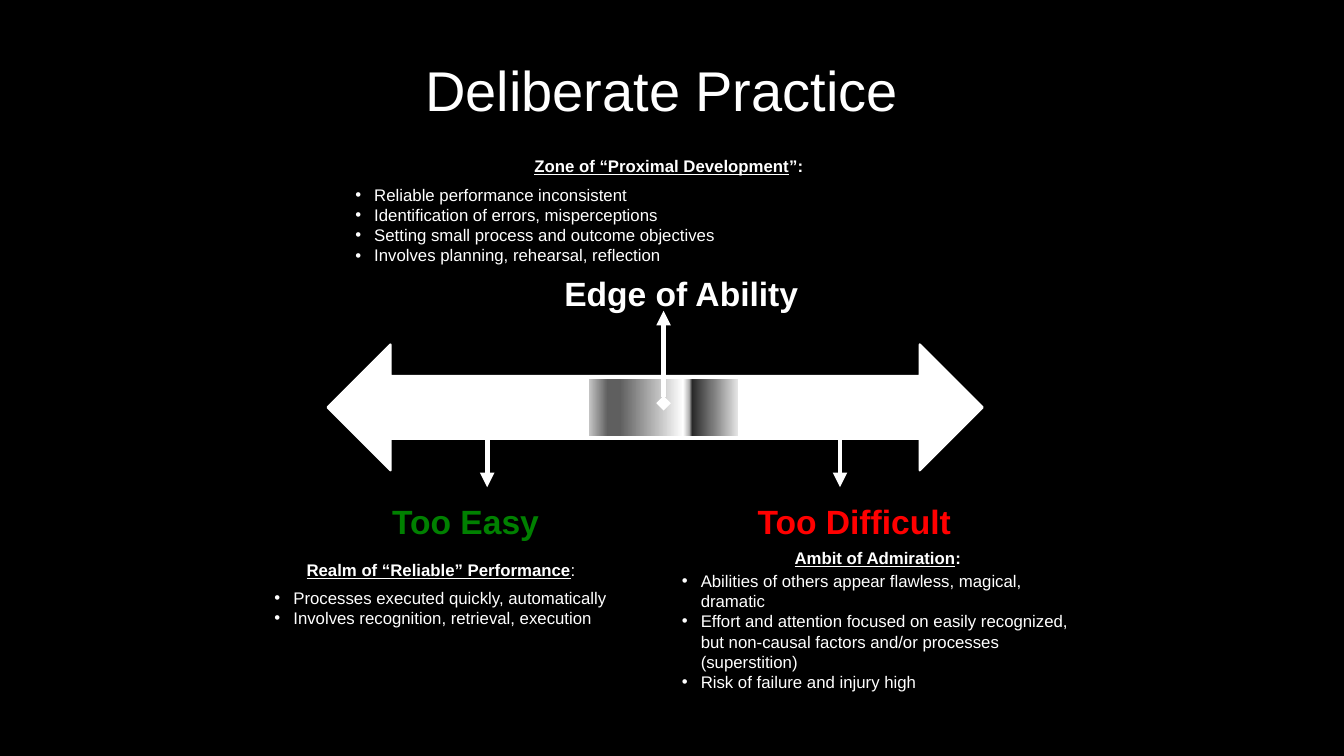
"""Build the Deliberate Practice slide: an ability continuum with three zones."""
from dataclasses import dataclass

from lxml.etree import SubElement
from pptx import Presentation
from pptx.dml.color import RGBColor
from pptx.enum.shapes import MSO_CONNECTOR, MSO_SHAPE
from pptx.enum.text import MSO_AUTO_SIZE, PP_ALIGN
from pptx.oxml.ns import qn
from pptx.shapes.autoshape import Shape
from pptx.slide import Slide
from pptx.text.text import TextFrame, _Paragraph
from pptx.util import Emu, Pt

EMU_PER_PX = 9525


@dataclass(frozen=True)
class Theme:
    font: str = "Arial"
    background: str = "000000"
    ink: str = "FFFFFF"
    easy: str = "008000"
    difficult: str = "FF0000"
    title_size: int = 40
    label_size: int = 24
    body_size: int = 12
    outline: float = 1.5
    pointer: float = 3.5
    indent: int = 18
    edge_stops: tuple[tuple[int, str], ...] = (
        (0, "CBCBCB"), (13, "5F5F5F"), (21, "5F5F5F"), (63, "FFFFFF"),
        (67, "B2B2B2"), (69, "292929"), (82, "777777"), (100, "EAEAEA"),
    )


THEME = Theme()


@dataclass(frozen=True)
class Box:
    left: int
    top: int
    width: int
    height: int

    def emu(self) -> tuple[Emu, ...]:
        return tuple(px(n) for n in (self.left, self.top, self.width, self.height))


@dataclass(frozen=True)
class Label:
    text: str
    box: Box
    color: str


@dataclass(frozen=True)
class Pointer:
    x: int
    start: int
    end: int


@dataclass(frozen=True)
class Zone:
    heading: str
    ending: str
    ending_bold: bool
    gap: int
    box: Box
    points: tuple[str, ...]


CONTINUUM = Box(312, 328, 624, 120)
EDGE = Box(560, 360, 144, 56)
TITLE = Label("Deliberate Practice", Box(281, 48, 698, 74), THEME.ink)
LABELS = (
    Label("Edge of Ability", Box(528, 255, 252, 48), THEME.ink),
    Label("Too Difficult", Box(712, 472, 207, 48), THEME.difficult),
    Label("Too Easy", Box(364, 472, 160, 48), THEME.easy),
)
POINTERS = (Pointer(632, 384, 296), Pointer(464, 392, 464), Pointer(800, 392, 464))
ZONES = (
    Zone("Zone of “Proximal Development", "”:", True, 6, Box(329, 144, 616, 144), (
        "Reliable performance inconsistent",
        "Identification of errors, misperceptions",
        "Setting small process and outcome objectives",
        "Involves planning, rehearsal, reflection",
    )),
    Zone("Realm of “Reliable” Performance", ":", False, 6, Box(252, 528, 336, 76), (
        "Processes executed quickly, automatically",
        "Involves recognition, retrieval, execution",
    )),
    Zone("Ambit of Admiration", ":", True, 2, Box(640, 517, 392, 149), (
        "Abilities of others appear flawless, magical, dramatic",
        "Effort and attention focused on easily recognized, "
        "but non-causal factors and/or processes (superstition)",
        "Risk of failure and injury high",
    )),
)


def px(length: int) -> Emu:
    """Turn px into EMU."""
    return Emu(length * EMU_PER_PX)


def rgb(color: str) -> RGBColor:
    """Read a hex colour."""
    return RGBColor.from_string(color)


def add_run(paragraph: _Paragraph, text: str, size: int, color: str = THEME.ink,
            bold: bool = False, underline: bool = False) -> None:
    """Append one formatted run."""
    run = paragraph.add_run()
    run.text = text
    run.font.name = THEME.font
    run.font.size = Pt(size)
    run.font.bold = bold
    run.font.underline = underline
    run.font.color.rgb = rgb(color)


def add_frame(slide: Slide, box: Box, wrap: bool = True) -> TextFrame:
    """Add a text box that grows with its text."""
    frame = slide.shapes.add_textbox(*box.emu()).text_frame
    frame.word_wrap = wrap
    frame.auto_size = MSO_AUTO_SIZE.SHAPE_TO_FIT_TEXT
    return frame


def add_block(slide: Slide, preset: MSO_SHAPE, box: Box) -> Shape:
    """Add a filled, outlined shape of the continuum."""
    block = slide.shapes.add_shape(preset, *box.emu())
    block.shadow.inherit = False
    block.fill.solid()
    block.fill.fore_color.rgb = rgb(THEME.ink)
    block.line.color.rgb = rgb(THEME.ink)
    block.line.width = Pt(THEME.outline)
    return block


def shade_edge(edge: Shape) -> None:
    """Fill the edge zone with its horizontal gradient."""
    edge.fill.gradient()
    edge.fill.gradient_angle = 0
    stops = edge.fill._fill._gradFill.find(qn("a:gsLst"))
    for stop in list(stops):
        stops.remove(stop)
    for percent, color in THEME.edge_stops:
        stop = SubElement(stops, qn("a:gs"), pos=str(percent * 1000))
        SubElement(stop, qn("a:srgbClr"), val=color)


def add_pointer(slide: Slide, pointer: Pointer) -> None:
    """Draw a vertical arrow with a diamond at its start."""
    x = px(pointer.x)
    arrow = slide.shapes.add_connector(
        MSO_CONNECTOR.STRAIGHT, x, px(pointer.start), x, px(pointer.end))
    arrow.line.color.rgb = rgb(THEME.ink)
    arrow.line.width = Pt(THEME.pointer)
    properties = arrow._element.spPr
    outline = properties.find(qn("a:ln"))
    SubElement(outline, qn("a:headEnd"), type="diamond")
    SubElement(outline, qn("a:tailEnd"), type="triangle")
    SubElement(properties, qn("a:effectLst"))


def add_zone(slide: Slide, zone: Zone) -> None:
    """Write a zone's underlined heading and its bulleted points."""
    frame = add_frame(slide, zone.box)
    heading = frame.paragraphs[0]
    heading.alignment = PP_ALIGN.CENTER
    heading.space_after = Pt(zone.gap)
    add_run(heading, zone.heading, THEME.body_size, bold=True, underline=True)
    add_run(heading, zone.ending, THEME.body_size, bold=zone.ending_bold)
    for text in zone.points:
        point = frame.add_paragraph()
        properties = point._p.get_or_add_pPr()
        properties.set("marL", str(px(THEME.indent)))
        properties.set("indent", str(-px(THEME.indent)))
        SubElement(properties, qn("a:buFont"), typeface=THEME.font)
        SubElement(properties, qn("a:buChar"), char="•")
        add_run(point, text, THEME.body_size)


def main() -> None:
    """Assemble and save the slide."""
    deck = Presentation()
    deck.slide_width, deck.slide_height = px(1280), px(720)
    slide = deck.slides.add_slide(deck.slide_layouts[6])
    slide.background.fill.solid()
    slide.background.fill.fore_color.rgb = rgb(THEME.background)
    add_block(slide, MSO_SHAPE.LEFT_RIGHT_ARROW, CONTINUUM)
    shade_edge(add_block(slide, MSO_SHAPE.RECTANGLE, EDGE))
    for pointer in POINTERS:
        add_pointer(slide, pointer)
    for label in LABELS:
        caption = add_frame(slide, label.box, wrap=False).paragraphs[0]
        add_run(caption, label.text, THEME.label_size, label.color, bold=True)
    title = add_frame(slide, TITLE.box).paragraphs[0]
    title.alignment = PP_ALIGN.CENTER
    add_run(title, TITLE.text, THEME.title_size, TITLE.color)
    for zone in ZONES:
        add_zone(slide, zone)
    deck.save("out.pptx")


if __name__ == "__main__":
    main()
